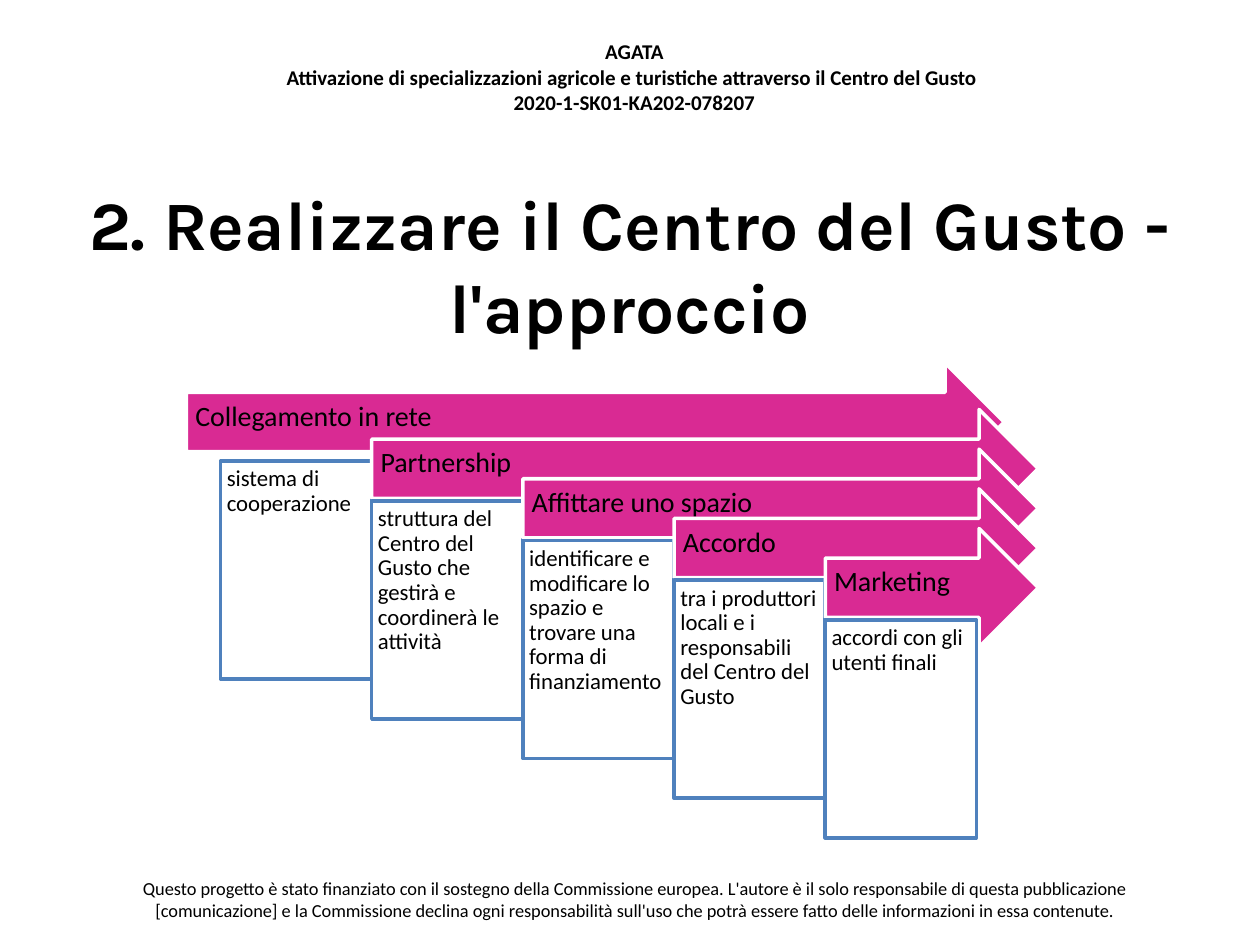
from pptx import Presentation
from pptx.dml.color import RGBColor
from pptx.enum.shapes import MSO_SHAPE as SHAPE
from pptx.enum.text import MSO_ANCHOR as ANCHOR, PP_ALIGN as ALIGN
from pptx.util import Inches, Pt

HEADER = [
    "AGATA",
    "Attivazione di specializzazioni agricole e turistiche attraverso il Centro del Gusto ",
    "2020-1-SK01-KA202-078207",
]
TITLE = "2. Realizzare il Centro del Gusto - l'approccio"
FOOTER = [
    "Questo progetto è stato finanziato con il sostegno della Commissione europea. "
    "L'autore è il solo responsabile di questa pubblicazione [comunicazione] e la "
    "Commissione declina ogni responsabilità sull'uso che potrà essere fatto delle "
    "informazioni in essa contenute."
]
STEPS = [
    ("Collegamento in rete", "sistema di cooperazione"),
    ("Partnership", "struttura del Centro del Gusto che gestirà e coordinerà le attività"),
    ("Affittare uno spazio",
     "identificare e modificare lo spazio e trovare una forma di finanziamento"),
    ("Accordo", "tra i produttori locali e i responsabili del Centro del Gusto"),
    ("Marketing", "accordi con gli utenti finali"),
]

BLACK, WHITE, PINK, BLUE = "000000", "FFFFFF", "D92A93", "4F81BD"
DETAIL_LEFT, DETAIL_TOP, DETAIL_W, DETAIL_H = 1.75, 3.66, 1.2, 1.73
STEP_DROP, ARROW_H, ARROW_RISE, ARROW_RIGHT = 0.315, 0.94, 0.725, 8.24
FIRST_ARROW = (1.48, 2.88, 6.49, ARROW_H)
ARROW_INSETS = (0.07, 0.07, 0.28, 0.15)
DETAIL_INSETS = (0.05,) * 4


def color(value):
    return RGBColor.from_string(value)


def write(shape, lines, size, font="Calibri", bold=False, align=ALIGN.LEFT,
          anchor=ANCHOR.TOP, spacing=1.0, insets=(0.1, 0.05, 0.1, 0.05)):
    frame = shape.text_frame
    frame.text = "\n".join(lines)
    frame.word_wrap = True
    frame.vertical_anchor = anchor
    for side, inset in zip(("left", "top", "right", "bottom"), insets):
        setattr(frame, f"margin_{side}", Inches(inset))
    for paragraph in frame.paragraphs:
        paragraph.alignment = align
        paragraph.line_spacing = spacing
        for name, value in {"name": font, "size": Pt(size), "bold": bold}.items():
            setattr(paragraph.font, name, value)
        paragraph.font.color.rgb = color(BLACK)


def add_box(slide, kind, place, fill, line, text, **style):
    box = slide.shapes.add_shape(kind, *map(Inches, place))
    box.shadow.inherit = False
    box.fill.solid()
    box.fill.fore_color.rgb = color(fill)
    box.line.color.rgb = color(line)
    box.line.width = Pt(2)
    write(box, [text], spacing=0.9, **style)


def main():
    deck = Presentation()
    deck.slide_width, deck.slide_height = Inches(10), Inches(7.5)
    slide = deck.slides.add_slide(deck.slide_layouts[5])

    title = slide.shapes.title
    place = {"left": 0.5, "top": 1.47, "width": 9, "height": 1.25}
    for name, value in place.items():
        setattr(title, name, Inches(value))
    write(title, [TITLE], 39.6, font="Karla", bold=True, align=ALIGN.CENTER,
          anchor=ANCHOR.MIDDLE)

    for lines, place, size, bold in (
        (HEADER, (2.08, 0.26, 5.91, 0.71), 12, True),
        (FOOTER, (0.54, 6.91, 9, 0.47), 10.5, False),
    ):
        note = slide.shapes.add_textbox(*map(Inches, place))
        write(note, lines, size, bold=bold, align=ALIGN.CENTER)

    for index, (step, detail) in enumerate(STEPS):
        left = DETAIL_LEFT + index * DETAIL_W
        top = DETAIL_TOP + index * STEP_DROP
        arrow = (left, top - ARROW_RISE, ARROW_RIGHT - left, ARROW_H)
        add_box(slide, SHAPE.RIGHT_ARROW, arrow if index else FIRST_ARROW, PINK, WHITE,
                step, size=16, anchor=ANCHOR.MIDDLE, insets=ARROW_INSETS)
        add_box(slide, SHAPE.RECTANGLE, (left, top, DETAIL_W, DETAIL_H), WHITE, BLUE,
                detail, size=13, insets=DETAIL_INSETS)

    deck.save("out.pptx")


if __name__ == "__main__":
    main()
